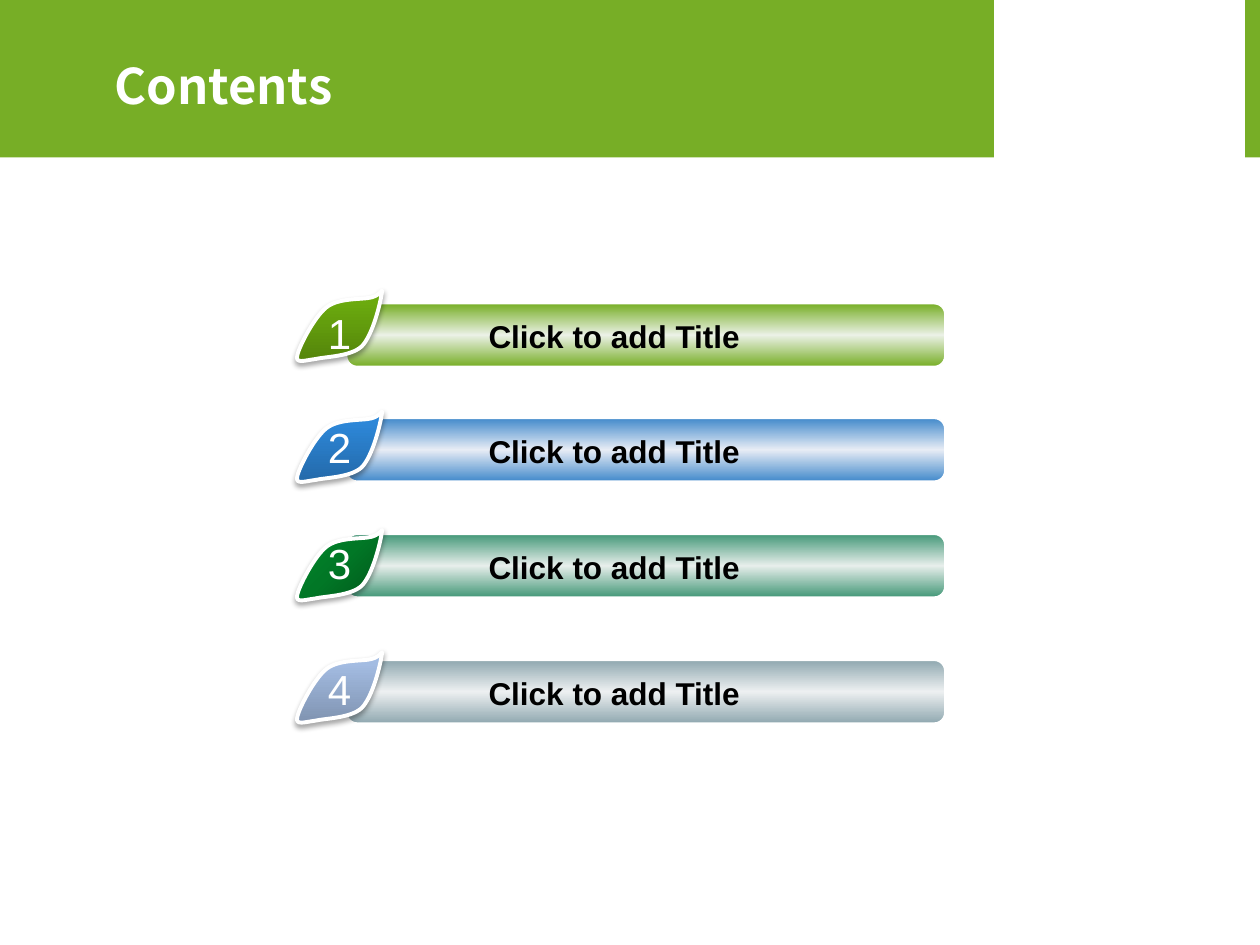
from dataclasses import dataclass

from lxml import etree
from pptx import Presentation
from pptx.dml.color import RGBColor
from pptx.enum.shapes import MSO_SHAPE
from pptx.enum.text import MSO_ANCHOR, MSO_AUTO_SIZE, PP_ALIGN
from pptx.oxml import parse_xml
from pptx.oxml.ns import nsdecls, qn
from pptx.util import Inches, Pt

RECT, ROUND_RECT = MSO_SHAPE.RECTANGLE, MSO_SHAPE.ROUNDED_RECTANGLE
LEFT, CENTER = PP_ALIGN.LEFT, PP_ALIGN.CENTER
TOP, MIDDLE = MSO_ANCHOR.TOP, MSO_ANCHOR.MIDDLE
FIT_SHAPE = MSO_AUTO_SIZE.SHAPE_TO_FIT_TEXT


@dataclass(frozen=True)
class Theme:
    green: str = "77AE26"
    white: str = "FFFFFF"
    black: str = "000000"
    title_font: str = "Noto Sans CJK SC"
    body_font: str = "Arial"
    title_size: int = 28
    label_size: int = 18
    number_size: int = 24


@dataclass(frozen=True)
class Item:
    bar_top: float
    leaf_top: float
    bar_edge: str
    bar_middle: str
    leaf_stops: tuple
    leaf_angle: int = 270


THEME = Theme()
ITEMS = (
    Item(2.41, 2.27, "77AE26", "EBF1E6", ((0, "53830B"), (80, "6BAA0E"), (100, "6CAE0B"))),
    Item(3.32, 3.23, "438ACB", "E7ECF5", ((0, "2368A7"), (80, "2D87D8"), (100, "2A87DD"))),
    Item(4.24, 4.17, "449878", "E7EEEB", ((0, "01541A"), (50, "017726"), (100, "018D2D")), 225),
    Item(5.24, 5.14, "90A8B0", "EDF0F1", ((0, "7E91AE"), (80, "A3BCE2"), (100, "A3BDE5"))),
)

LEAF_LEFT = 2.34
# Hundredths of an inch from the leaf's top left corner;
# each curve has two control points and an end point
LEAF_START = (2, 55)
LEAF_CURVES = (
    (3, 49), (15, 25), (25, 17),
    (35, 9), (54, 11), (61, 9),
    (69, 7), (70, 0), (69, 6),
    (68, 13), (62, 39), (53, 48),
    (44, 56), (25, 56), (16, 58),
    (8, 59), (0, 62), (2, 55),
)


def rgb(color):
    return RGBColor.from_string(color)


def set_gradient(sp, stops, angle):
    """Fill with (percent, colour) stops; the angle runs clockwise."""
    gs = "".join(f'<a:gs pos="{pos * 1000}"><a:srgbClr val="{color}"/></a:gs>' for pos, color in stops)
    grad = parse_xml(
        f'<a:gradFill {nsdecls("a")} rotWithShape="1"><a:gsLst>{gs}</a:gsLst>'
        f'<a:lin ang="{angle * 60000}" scaled="0"/></a:gradFill>'
    )
    sp.fill.solid()
    spPr = sp._element.spPr
    spPr.replace(spPr.find(qn("a:solidFill")), grad)


def set_outline(sp, width):
    sp.line.color.rgb = rgb(THEME.white)
    sp.line.width = Pt(width)


def add_soft_shadow(sp):
    sp.shadow.inherit = False
    sp._element.spPr.find(qn("a:effectLst")).append(parse_xml(
        f'<a:outerShdw {nsdecls("a")} blurRad="{Pt(3.1)}" dist="{Pt(1.8)}" dir="5400000"'
        f' algn="t" rotWithShape="0"><a:srgbClr val="{THEME.black}">'
        '<a:alpha val="35000"/></a:srgbClr></a:outerShdw>'
    ))


def add_block(s, left, top, width, height, color):
    sp = s.shapes.add_shape(RECT, Inches(left), Inches(top), Inches(width), Inches(height))
    sp.shadow.inherit = False
    sp.fill.solid()
    sp.fill.fore_color.rgb = rgb(color)
    sp.line.fill.background()


def add_text(s, left, top, width, height, text, font, size, color,
             bold=False, align=CENTER, anchor=TOP, wrap=True):
    tf = s.shapes.add_textbox(Inches(left), Inches(top), Inches(width), Inches(height)).text_frame
    tf.word_wrap = wrap
    tf.vertical_anchor = anchor
    if anchor == TOP:
        tf.auto_size = FIT_SHAPE
    p = tf.paragraphs[0]
    p.alignment = align
    r = p.add_run()
    r.text = text
    r.font.name = font
    r.font.size = Pt(size)
    r.font.bold = bold
    r.font.color.rgb = rgb(color)


def add_bar(s, item):
    sp = s.shapes.add_shape(ROUND_RECT, Inches(2.75), Inches(item.bar_top), Inches(4.75), Inches(0.5))
    sp.adjustments[0] = 0.17
    sp.shadow.inherit = False
    set_gradient(sp, ((0, item.bar_edge), (50, item.bar_middle), (100, item.bar_edge)), 90)
    set_outline(sp, 1)
    add_text(s, 3, item.bar_top + 0.06, 3.75, 0.4, "Click to add Title",
             THEME.body_font, THEME.label_size, THEME.black, bold=True)


def lines_to_curves(sp):
    """Turn each three line segments of a freeform into one Bézier curve."""
    lines = list(sp._element.iter(qn("a:lnTo")))
    for i in range(0, len(lines), 3):
        curve = etree.Element(qn("a:cubicBezTo"))
        lines[i].addprevious(curve)
        for line in lines[i:i + 3]:
            curve.append(line[0])
            line.getparent().remove(line)


def add_leaf(s, item):
    builder = s.shapes.build_freeform(*LEAF_START, scale=Inches(0.01))
    builder.add_line_segments(LEAF_CURVES, close=True)
    sp = builder.convert_to_shape(Inches(LEAF_LEFT), Inches(item.leaf_top))
    lines_to_curves(sp)
    set_gradient(sp, item.leaf_stops, item.leaf_angle)
    set_outline(sp, 2.25)
    add_soft_shadow(sp)


def main():
    prs = Presentation()
    prs.slide_width, prs.slide_height = Inches(10), Inches(7.5)
    s = prs.slides.add_slide(prs.slide_layouts[6])

    add_block(s, 0, 0, 10, 1.25, THEME.green)
    add_block(s, 7.89, 0, 1.99, 1.33, THEME.white)
    add_text(s, 0.81, 0.36, 3.37, 0.62, "Contents", THEME.title_font, THEME.title_size,
             THEME.white, bold=True, align=LEFT, anchor=MIDDLE)

    for item in ITEMS:
        add_bar(s, item)
    for item in ITEMS:
        add_leaf(s, item)
    for number, item in enumerate(ITEMS, 1):
        add_text(s, 2.5, item.bar_top - 0.02, 0.39, 0.5, str(number),
                 THEME.body_font, THEME.number_size, THEME.white, wrap=False)

    prs.save("out.pptx")


if __name__ == "__main__":
    main()
